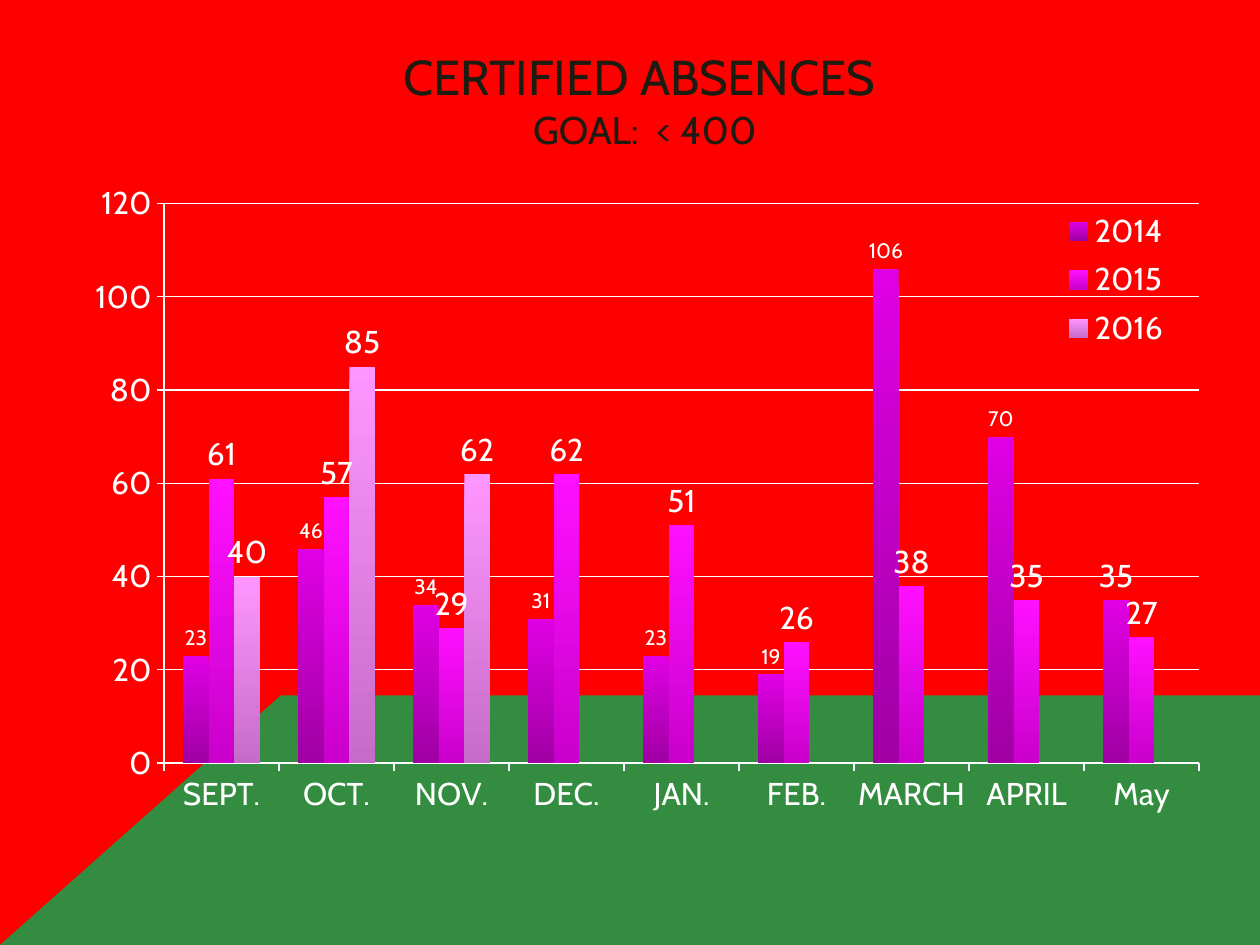
from lxml.etree import SubElement
from pptx import Presentation
from pptx.chart.data import CategoryChartData
from pptx.dml.color import RGBColor
from pptx.enum.chart import XL_CHART_TYPE as ChartType
from pptx.enum.chart import XL_LABEL_POSITION as LabelPosition
from pptx.enum.chart import XL_LEGEND_POSITION as LegendPosition
from pptx.enum.chart import XL_TICK_MARK as TickMark
from pptx.enum.text import MSO_ANCHOR, PP_ALIGN
from pptx.oxml import parse_xml
from pptx.oxml.ns import nsdecls, qn
from pptx.util import Cm, Pt

RED = RGBColor(0xFF, 0x00, 0x00)
GREEN = RGBColor(0x00, 0xB0, 0x50)
INK = RGBColor(0x1E, 0x1C, 0x11)
WHITE = RGBColor(0xFF, 0xFF, 0xFF)

# Each year's bars run from a top colour to a bottom colour.
BAR_COLOURS = [
    (RGBColor(0xE0, 0x00, 0xE4), RGBColor(0xA0, 0x00, 0xA4)),
    (RGBColor(0xFF, 0x10, 0xFF), RGBColor(0xCA, 0x00, 0xCC)),
    (RGBColor(0xFF, 0x96, 0xFF), RGBColor(0xC6, 0x6C, 0xC8)),
]
MONTHS = ["SEPT.", "OCT.", "NOV.", "DEC.", "JAN.", "FEB.", "MARCH", "APRIL", "May"]
ABSENCES = {
    "2014": [23, 46, 34, 31, 23, 19, 106, 70, 35],
    "2015": [61, 57, 29, 62, 51, 26, 38, 35, 27],
    "2016": [40, 85, 62] + [None] * 6,
}
SMALL_LABELS = range(8)


def format_font(font, size=18, colour=WHITE, name="Cabin"):
    font.size, font.name, font.bold = Pt(size), name, False
    font.color.rgb = colour


def write(para, text, **style):
    span = para.add_run()
    span.text = text
    format_font(span.font, **style)


def place_in_chart(element, x, y, w, h, inner=False):
    """Give a plot area or legend a manual layout in fractions of the chart."""
    for old in element.findall(qn("c:layout")):
        element.remove(old)
    target = '<c:layoutTarget val="inner"/>' if inner else ""
    layout = parse_xml(
        f'<c:layout {nsdecls("c")}><c:manualLayout>{target}'
        '<c:xMode val="edge"/><c:yMode val="edge"/>'
        f'<c:x val="{x}"/><c:y val="{y}"/><c:w val="{w}"/><c:h val="{h}"/>'
        "</c:manualLayout></c:layout>"
    )
    if inner:
        element.insert(0, layout)
    else:
        element.find(qn("c:legendPos")).addnext(layout)


class SlideBuilder:
    def __init__(self, deck, background):
        self.page = deck.slides.add_slide(deck.slide_layouts[5])
        self.page.background.fill.solid()
        self.page.background.fill.fore_color.rgb = background

    def floor(self, corners, colour, opacity):
        points = [(Cm(x), Cm(y)) for x, y in corners]
        builder = self.page.shapes.build_freeform(*points[0])
        builder.add_line_segments(points[1:], close=True)
        shape = builder.convert_to_shape()
        shape.shadow.inherit = False
        shape.fill.solid()
        shape.fill.fore_color.rgb = colour
        shape.line.fill.background()
        tint = shape.fill._xPr.find(qn("a:solidFill"))[0]
        SubElement(tint, qn("a:alpha"), val=str(opacity * 1000))
        self.page.shapes._spTree.insert(2, shape._element)

    def title(self, heading, goal, left, top, width, height):
        box = self.page.shapes.title
        box.left, box.top, box.width, box.height = map(Cm, (left, top, width, height))
        frame = box.text_frame
        frame.word_wrap = True
        frame.vertical_anchor = MSO_ANCHOR.MIDDLE
        para = frame.paragraphs[0]
        para.alignment = PP_ALIGN.CENTER
        write(para, heading, size=28, colour=INK)
        para.add_line_break()
        write(para, goal, size=22, colour=INK)

    def column_chart(self, categories, series, left, top, width, height):
        data = CategoryChartData()
        data.categories = categories
        for name, values in series.items():
            data.add_series(name, values)
        chart = self.page.shapes.add_chart(
            ChartType.COLUMN_CLUSTERED, *map(Cm, (left, top, width, height)), data
        ).chart
        chart.has_title = False
        format_font(chart.font)
        plot = chart.plots[0]
        plot.gap_width, plot.overlap, plot.vary_by_categories = 150, 0, False
        for bars, colours in zip(plot.series, BAR_COLOURS):
            self.style_bars(bars, colours)
        for index in SMALL_LABELS:
            label = plot.series[0].points[index].data_label
            format_font(label.font, size=12)
            label.position = LabelPosition.OUTSIDE_END
        self.style_axes(chart)
        chart.has_legend = True
        chart.legend.position = LegendPosition.RIGHT
        chart.legend.include_in_layout = True
        format_font(chart.legend.font)
        place_in_chart(chart.legend._element, 0.86, 0.03, 0.12, 0.21)
        plot_area = chart._chartSpace.chart.plotArea
        place_in_chart(plot_area, 0.096, 0.033, 0.896, 0.75, inner=True)

    def style_bars(self, bars, colours):
        fill = bars.format.fill
        fill.gradient()
        fill.gradient_angle = 270
        for stop, colour, position in zip(fill.gradient_stops, colours, (0, 1)):
            stop.color.rgb = colour
            stop.position = position
        bars.invert_if_negative = False
        labels = bars.data_labels
        labels.show_value = True
        labels.position = LabelPosition.OUTSIDE_END
        format_font(labels.font)

    def style_axes(self, chart):
        scale = chart.value_axis
        scale.minimum_scale, scale.maximum_scale, scale.major_unit = 0, 120, 20
        scale.has_major_gridlines = True
        for axis in (scale, chart.category_axis):
            axis.major_tick_mark = TickMark.OUTSIDE
            format_font(axis.tick_labels.font)
        for part in (scale, chart.category_axis, scale.major_gridlines):
            part.format.line.color.rgb = WHITE
            part.format.line.width = Pt(0.75)


def main():
    deck = Presentation()
    deck.slide_width, deck.slide_height = Cm(25.4), Cm(19.05)
    slide = SlideBuilder(deck, RED)
    slide.floor(
        [(0, 19.05), (5.66, 14.02), (25.4, 14.02), (25.4, 19.05)], GREEN, opacity=80
    )
    slide.title("CERTIFIED ABSENCES ", "GOAL:  < 400", 4.01, 0.41, 17.98, 3.18)
    slide.column_chart(MONTHS, ABSENCES, 1.07, 3.61, 23.29, 15.04)
    deck.save("out.pptx")


if __name__ == "__main__":
    main()
